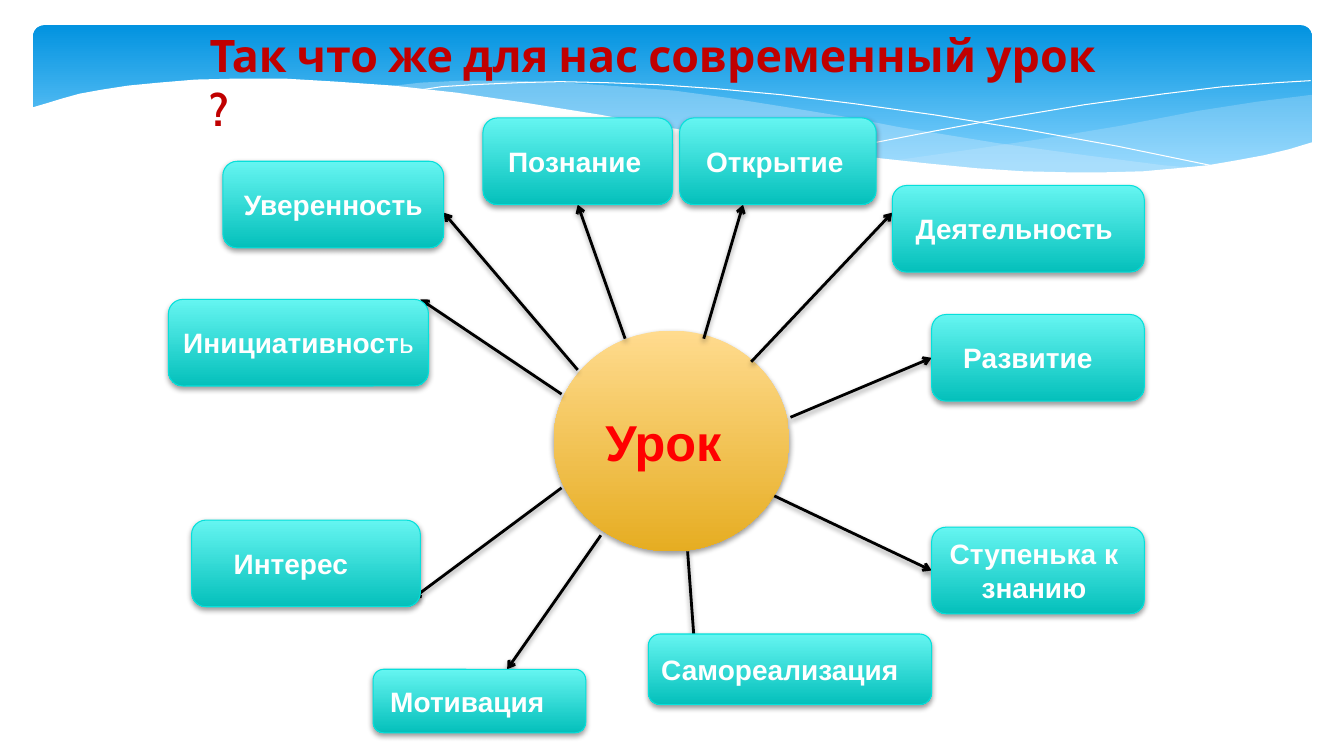
from lxml import etree
from pptx import Presentation
from pptx import util as u
from pptx.dml.color import RGBColor
from pptx.enum import shapes, text
from pptx.oxml import ns

PX = 9144
WHITE = RGBColor(0xFF, 0xFF, 0xFF)
BLACK = RGBColor(0x00, 0x00, 0x00)
RED = RGBColor(0xFF, 0x00, 0x00)
DARK_RED = RGBColor(0xC0, 0x00, 0x00)
SKY_TOP = RGBColor(0x02, 0x93, 0xE0)
SKY_BOTTOM = RGBColor(0x83, 0xD3, 0xFE)
MIST = RGBColor(0xC6, 0xE7, 0xFC)
TEAL_TOP = RGBColor(0x65, 0xF5, 0xF1)
TEAL_BOTTOM = RGBColor(0x04, 0xC0, 0xBB)
TEAL_EDGE = RGBColor(0x05, 0xE0, 0xDB)
GOLD_TOP = RGBColor(0xFF, 0xDB, 0x8E)
GOLD_BOTTOM = RGBColor(0xE6, 0xAD, 0x22)

RIGHT_WAVE = [
    (1301, 94), (1246, 101), (1188, 110), (1110, 125), (1038, 137), (972, 147),
    (882, 160), (940, 165), (993, 169), (1041, 171), (1085, 172), (1126, 171),
    (1163, 169), (1196, 165), (1228, 160), (1257, 154), (1301, 142)]
LONG_WAVE = [
    (1190, 167), (1154, 164), (1076, 154), (989, 142), (891, 126), (839, 116),
    (778, 106), (721, 97), (669, 90), (619, 86), (560, 82), (506, 80), (459, 80),
    (418, 82), (382, 86), (431, 90), (483, 97), (539, 106), (599, 116), (706, 135),
    (779, 146), (846, 156), (907, 163), (963, 168), (1014, 171), (1061, 173),
    (1104, 173), (1143, 171)]
FALLING_LINE = [
    (412, 90), (438, 86), (470, 84), (516, 82), (555, 81), (600, 82), (652, 84),
    (710, 88), (775, 94), (848, 103), (927, 114), (1014, 128), (1108, 145), (1210, 166)]
RISING_LINE = [
    (818, 151), (870, 141), (927, 130), (997, 117), (1075, 104), (1155, 93),
    (1213, 86), (1267, 82), (1300, 80)]
WHITE_WAVE = [
    (1302, 141), (1279, 148), (1254, 154), (1227, 159), (1198, 164), (1167, 167),
    (1134, 170), (1097, 171), (1058, 171), (1015, 170), (969, 167), (918, 162),
    (863, 156), (804, 149), (740, 139), (671, 128), (596, 114), (521, 102),
    (453, 92), (390, 85), (333, 81), (282, 78), (235, 78), (194, 79), (158, 82),
    (127, 85), (101, 89), (79, 93), (61, 98), (48, 102), (31, 107), (31, 224), (1303, 224)]

IDEAS = [
    ("Познание", "", (479, 17, 188, 86), (620, 236), (573, 103), 3, 2),
    ("Открытие", "", (674, 17, 195, 86), (698, 236), (737, 103), 3, None),
    ("Деятельность", "", (885, 84, 250, 86), (745, 259), (885, 111), 4, None),
    ("Развитие", "", (924, 212, 211, 86), (784, 314), (924, 255), 10, 1),
    ("Ступенька к знанию", "", (924, 423, 211, 86), (768, 392), (924, 466), 4, 1),
    ("Самореализация", "", (643, 529, 281, 70), (682, 447), (690, 556), 10, None),
    ("Мотивация", "", (370, 564, 211, 63), (596, 431), (503, 564), 12, None),
    ("Интерес", "", (190, 416, 227, 86), (557, 384), (409, 494), 15, None),
    ("Инициативност", "ь", (167, 197, 258, 86), (557, 291), (417, 197), 0, None),
    ("Уверенность", "", (221, 60, 219, 86), (573, 267), (440, 111), 0, None),
]


def emu(*lengths):
    return [u.Emu(length * PX) for length in lengths]


def add_effects(shape, shadowed=True):
    effects = etree.SubElement(shape._element.spPr, ns.qn("a:effectLst"))
    if shadowed:
        shadow = etree.SubElement(
            effects, ns.qn("a:outerShdw"), blurRad=str(u.Pt(4)), dist=str(u.Pt(2)),
            dir="5400000", algn="ctr", rotWithShape="0")
        color = etree.SubElement(shadow, ns.qn("a:srgbClr"), val=str(BLACK))
        etree.SubElement(color, ns.qn("a:alpha"), val="38000")


def fill_gradient(shape, top_color, bottom_color, end=1.0):
    shape.fill.gradient()
    shape.fill.gradient_angle = 270
    stops = shape.fill.gradient_stops
    for stop, color, position in zip(stops, (top_color, bottom_color), (0, end)):
        stop.color.rgb = color
        stop.position = position


def format_run(run, font, size, color, bold=True):
    run.font.name = font
    run.font.size = u.Pt(size)
    run.font.bold = bold
    run.font.color.rgb = color


def draw_wave(slide, origin, points, color=None, opacity=100):
    builder = slide.shapes.build_freeform(*points[0], scale=PX)
    builder.add_line_segments(points[1:], close=color is not None)
    wave = builder.convert_to_shape(*emu(*origin))
    wave.shadow.inherit = False
    if color is None:
        wave.fill.background()
        wave.line.color.rgb = WHITE
        wave.line.width = u.Pt(0)
        return
    wave.fill.solid()
    wave.fill.fore_color.rgb = color
    wave.line.fill.background()
    if opacity < 100:
        fill_color = wave._element.spPr.find(".//" + ns.qn("a:srgbClr"))
        etree.SubElement(fill_color, ns.qn("a:alpha"), val=str(opacity * 1000))


def draw_header(slide, box):
    left, top, width, height = box
    band = slide.shapes.add_shape(
        shapes.MSO_SHAPE.ROUNDED_RECTANGLE,
        *emu(left + 33, top + 25, width - 65, height - 69))
    band.adjustments[0] = 0.07
    band.shadow.inherit = False
    band.line.fill.background()
    fill_gradient(band, SKY_TOP, SKY_BOTTOM, 0.9)
    draw_wave(slide, (left, top), RIGHT_WAVE, MIST, 29)
    draw_wave(slide, (left, top), LONG_WAVE, MIST, 40)
    draw_wave(slide, (left, top), FALLING_LINE)
    draw_wave(slide, (left, top), RISING_LINE)
    draw_wave(slide, (left, top), WHITE_WAVE, WHITE)
    title = slide.shapes.add_textbox(*emu(left + 198, top + 23, 906, 64))
    title.text_frame.word_wrap = True
    title.text_frame.text = "Так что же для нас современный урок ?"
    format_run(title.text_frame.paragraphs[0].runs[0], "Cabin", 32, DARK_RED)


def draw_node(slide, kind, box, label, colors, shift):
    node = slide.shapes.add_shape(kind, *emu(*box))
    fill_gradient(node, *colors)
    node.line.fill.background()
    add_effects(node)
    frame = node.text_frame
    frame.word_wrap = True
    frame.vertical_anchor = text.MSO_ANCHOR.MIDDLE
    frame.margin_left, frame.margin_right = emu(0, 2 * shift)
    frame.text = label
    frame.paragraphs[0].alignment = text.PP_ALIGN.CENTER
    return node


def draw_arrow(slide, start, end):
    arrow = slide.shapes.add_connector(
        shapes.MSO_CONNECTOR.STRAIGHT, *emu(*start, *end))
    arrow.line.color.rgb = BLACK
    arrow.line.width = u.Pt(2)
    etree.SubElement(arrow.line._get_or_add_ln(), ns.qn("a:tailEnd"), type="arrow")
    add_effects(arrow)
    return arrow


def draw_idea_map(slide, box):
    left, top, _, _ = box
    lesson = draw_node(
        slide, shapes.MSO_SHAPE.OVAL, (left + 549, top + 228, 234, 219),
        "Урок", (GOLD_TOP, GOLD_BOTTOM), 8)
    format_run(lesson.text_frame.paragraphs[0].runs[0], "Arial", 36, RED)
    for label, light_tail, (x, y, width, height), start, end, shift, site in IDEAS:
        arrow = draw_arrow(
            slide, (left + start[0], top + start[1]), (left + end[0], top + end[1]))
        idea = draw_node(
            slide, shapes.MSO_SHAPE.ROUNDED_RECTANGLE, (left + x, top + y, width, height),
            label, (TEAL_TOP, TEAL_BOTTOM), shift)
        idea.line.color.rgb = TEAL_EDGE
        idea.line.width = u.Pt(0.75)
        paragraph = idea.text_frame.paragraphs[0]
        format_run(paragraph.runs[0], "Arial", 20, WHITE)
        if light_tail:
            tail = paragraph.add_run()
            tail.text = light_tail
            format_run(tail, "Arial", 20, WHITE, bold=False)
        if site is not None:
            arrow.end_connect(idea, site)


def main():
    presentation = Presentation()
    presentation.slide_width, presentation.slide_height = emu(1333, 750)
    slide = presentation.slides.add_slide(presentation.slide_layouts[6])
    draw_header(slide, (0, 0, 1333, 225))
    draw_idea_map(slide, (0, 100, 1333, 650))
    presentation.save("out.pptx")


if __name__ == "__main__":
    main()
